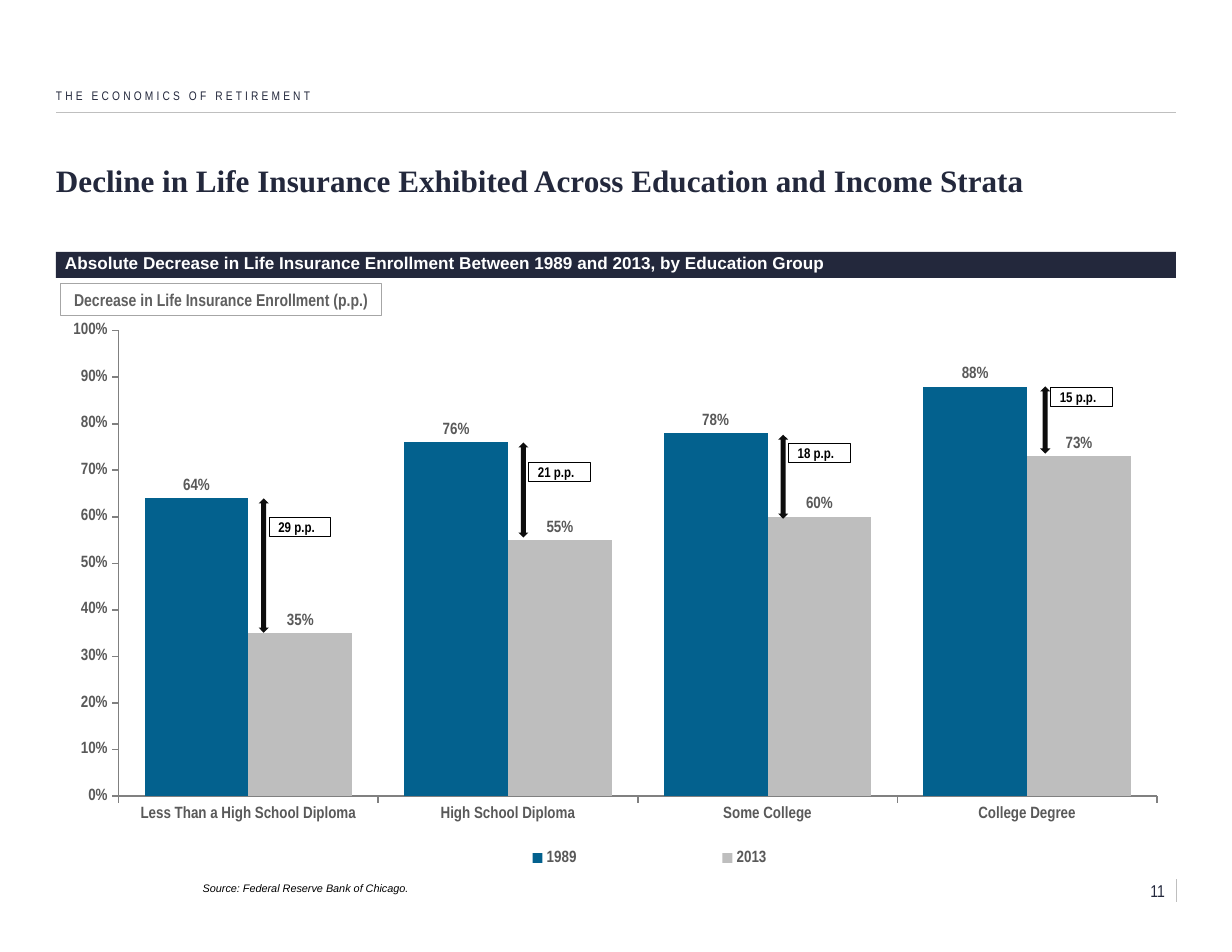
from dataclasses import dataclass

from lxml.etree import SubElement
from pptx import Presentation
from pptx.chart.data import CategoryChartData
from pptx.dml.color import RGBColor
from pptx.enum.chart import (
    XL_CHART_TYPE as ChartType,
    XL_LABEL_POSITION as LabelAt,
    XL_LEGEND_POSITION as LegendAt,
    XL_TICK_LABEL_POSITION as TickLabelAt,
    XL_TICK_MARK as Tick,
)
from pptx.enum.shapes import MSO_CONNECTOR as Connector, MSO_SHAPE as Shape
from pptx.enum.text import MSO_ANCHOR as Anchor, PP_ALIGN as Align
from pptx.oxml import parse_xml
from pptx.oxml.ns import nsdecls, qn
from pptx.util import Pt


@dataclass(frozen=True)
class Theme:
    navy: str = "23283C"
    blue: str = "03618E"
    silver: str = "BEBEBE"
    rule: str = "BFBFBF"
    axis: str = "808080"
    frame: str = "A6A6A6"
    chart_text: str = "595959"
    caption: str = "5F5F5F"
    arrow: str = "0D0D0D"
    black: str = "000000"
    white: str = "FFFFFF"
    serif: str = "Times New Roman"
    sans: str = "Arial"
    narrow: str = "Arial Narrow"
    title_size: float = 20
    body_size: float = 11
    chart_size: float = 10.5
    change_size: float = 9
    header_size: float = 8
    source_size: float = 7


def set_format(target, values):
    for name, value in values.items():
        setattr(target, name, value)


def set_font(font, size, name, color, **values):
    set_format(font, {"size": Pt(size), "name": name, **values})
    font.color.rgb = RGBColor.from_string(color)


def set_fill(fill, color):
    fill.solid()
    fill.fore_color.rgb = RGBColor.from_string(color)


def set_line(line, color, width):
    line.width = Pt(width)
    line.color.rgb = RGBColor.from_string(color)


def replace_layout(part, fractions, inner=False):
    """Drop a chart part's layout and return one of x, y, w, h as chart fractions."""
    for old in part.findall(qn("c:layout")):
        part.remove(old)
    target = '<c:layoutTarget val="inner"/>' if inner else ""
    modes = '<c:xMode val="edge"/><c:yMode val="edge"/>'
    sizes = "".join(f'<c:{key} val="{value}"/>' for key, value in zip("xywh", fractions))
    return parse_xml(
        f'<c:layout {nsdecls("c")}><c:manualLayout>{target}{modes}{sizes}'
        "</c:manualLayout></c:layout>"
    )


class SlideBuilder:
    def __init__(self, slide, theme):
        self.shapes = slide.shapes
        self.theme = theme

    def rule(self, x1, y1, x2, y2):
        line = self.shapes.add_connector(Connector.STRAIGHT, Pt(x1), Pt(y1), Pt(x2), Pt(y2))
        set_line(line.line, self.theme.rule, 0.5)
        SubElement(line._element.spPr, qn("a:effectLst"))

    def fill_text(self, shape, text, font, insets, anchor=Anchor.TOP, align=Align.LEFT,
                  spacing=None):
        frame = shape.text_frame
        sides = ("margin_left", "margin_top", "margin_right", "margin_bottom")
        set_format(frame, dict(zip(sides, map(Pt, insets))))
        set_format(frame, {"word_wrap": True, "vertical_anchor": anchor})
        paragraph = frame.paragraphs[0]
        set_format(paragraph, {"alignment": align, "line_spacing": spacing})
        run = paragraph.add_run()
        run.text = text
        set_font(run.font, **font)
        return run

    def text(self, box, text, font, insets=(0, 0, 0, 0), **layout):
        return self.fill_text(self.shapes.add_textbox(*map(Pt, box)), text, font, insets, **layout)

    def shape(self, kind, box, fill=None, line=None):
        shape = self.shapes.add_shape(kind, *map(Pt, box))
        shape.shadow.inherit = False
        if fill:
            set_fill(shape.fill, fill)
        else:
            shape.fill.background()
        if line:
            set_line(shape.line, line, 0.75)
        else:
            shape.line.fill.background()
        return shape

    def change(self, left, top, height, label_top, label):
        """Double arrow between two column tops, with the difference beside it."""
        theme = self.theme
        arrow = self.shape(Shape.UP_DOWN_ARROW, (left, top, 6.5, height), fill=theme.arrow)
        arrow.adjustments[0], arrow.adjustments[1] = 0.29, 0.5
        tag = self.shape(Shape.RECTANGLE, (left + 6.8, label_top, 39.6, 12.2), line=theme.black)
        font = dict(size=theme.change_size, name=theme.narrow, color=theme.black, bold=True)
        self.fill_text(tag, label, font, (5.8, 0.7, 5.8, 0.7), Anchor.MIDDLE)

    def column_chart(self, box, categories, series):
        theme = self.theme
        data = CategoryChartData(number_format="0%")
        data.categories = categories
        for name, values, _ in series:
            data.add_series(name, values)
        chart = self.shapes.add_chart(ChartType.COLUMN_CLUSTERED, *map(Pt, box), data).chart
        set_format(chart, {"has_title": False, "has_legend": True})
        font = dict(size=theme.chart_size, name=theme.narrow, color=theme.chart_text, bold=True)
        percent = {"number_format": "0%", "number_format_is_linked": False}
        set_font(chart.font, **font)

        plot = chart.plots[0]
        set_format(plot, {"gap_width": 50, "overlap": 0, "vary_by_categories": False,
                          "has_data_labels": True})
        set_format(plot.data_labels, {"show_value": True, "position": LabelAt.OUTSIDE_END,
                                      **percent})
        set_font(plot.data_labels.font, **font)
        for columns, (_, _, color) in zip(plot.series, series):
            set_fill(columns.format.fill, color)

        for axis in (chart.category_axis, chart.value_axis):
            set_format(axis, {"has_major_gridlines": False, "major_tick_mark": Tick.OUTSIDE,
                              "minor_tick_mark": Tick.NONE})
            set_line(axis.format.line, theme.axis, 1)
            set_font(axis.tick_labels.font, **font)
        chart.category_axis.tick_label_position = TickLabelAt.LOW
        set_format(chart.value_axis, {"minimum_scale": 0, "maximum_scale": 1, "major_unit": 0.1})
        set_format(chart.value_axis.tick_labels, percent)

        set_format(chart.legend, {"position": LegendAt.BOTTOM, "include_in_layout": False})
        set_font(chart.legend.font, **font)
        legend = chart.legend._element
        legend.find(qn("c:legendPos")).addnext(replace_layout(legend, (0.3, 0.94, 0.46, 0.06)))
        plot_area = chart._chartSpace.chart.plotArea
        plot_area.insert(0, replace_layout(plot_area, (0.056, 0.017, 0.927, 0.841), inner=True))


def main():
    theme = Theme()
    deck = Presentation()
    set_format(deck, {"slide_width": Pt(792), "slide_height": Pt(612)})
    page = SlideBuilder(deck.slides.add_slide(deck.slide_layouts[6]), theme)

    page.rule(756, 565.2, 756, 579.6)
    page.rule(36, 72, 756, 72)
    page.text((36, 106.6, 720, 28.8),
              "Decline in Life Insurance Exhibited Across Education and Income Strata",
              dict(size=theme.title_size, name=theme.serif, color=theme.navy, bold=True),
              (0, 0, 0, 7.2), spacing=0.9)
    header = page.text((36, 54, 604.8, 14.4), "THE ECONOMICS OF RETIREMENT",
                       dict(size=theme.header_size, name=theme.narrow, color=theme.navy),
                       (0, 0, 259.2, 2.2), anchor=Anchor.BOTTOM)
    header.font._element.set("spc", "200")

    page.column_chart(
        (36, 206.6, 720, 355.7),
        ["Less Than a High School Diploma", "High School Diploma",
         "Some College", "College Degree"],
        [("1989", (0.64, 0.76, 0.78, 0.88), theme.blue),
         ("2013", (0.35, 0.55, 0.6, 0.73), theme.silver)],
    )

    banner = page.shape(Shape.RECTANGLE, (36, 162, 720, 16.6), fill=theme.navy)
    page.fill_text(banner,
                   "Absolute Decrease in Life Insurance Enrollment Between 1989 and 2013, "
                   "by Education Group",
                   dict(size=theme.body_size, name=theme.sans, color=theme.white, bold=True),
                   (5.8, 2.9, 5.8, 2.9), Anchor.BOTTOM)
    page.text((130.3, 563, 578.9, 12.2), "Source: Federal Reserve Bank of Chicago.",
              dict(size=theme.source_size, name=theme.sans, color=theme.black, italic=True),
              anchor=Anchor.BOTTOM)
    axis_caption = page.shape(Shape.RECTANGLE, (38.9, 182.2, 206.6, 20.9), line=theme.frame)
    page.fill_text(axis_caption, "Decrease in Life Insurance Enrollment (p.p.)",
                   dict(size=theme.body_size, name=theme.narrow, color=theme.caption, bold=True),
                   (7.2, 3.6, 7.2, 3.6), align=Align.CENTER)

    for left, top, height, label_top, points in (
        (166.3, 320.4, 86.4, 332.6, 29),
        (333.2, 284.4, 61.2, 297.4, 21),
        (500.2, 279.4, 54, 285.1, 18),
        (668.7, 248.4, 43.2, 249.1, 15),
    ):
        page.change(left, top, height, label_top, f"{points} p.p.")

    page.text((705.6, 565.2, 50.4, 14.4), "11",
              dict(size=theme.body_size, name=theme.narrow, color=theme.navy),
              (0, 0, 7.2, 0), anchor=Anchor.MIDDLE, align=Align.RIGHT)
    deck.save("out.pptx")


if __name__ == "__main__":
    main()
